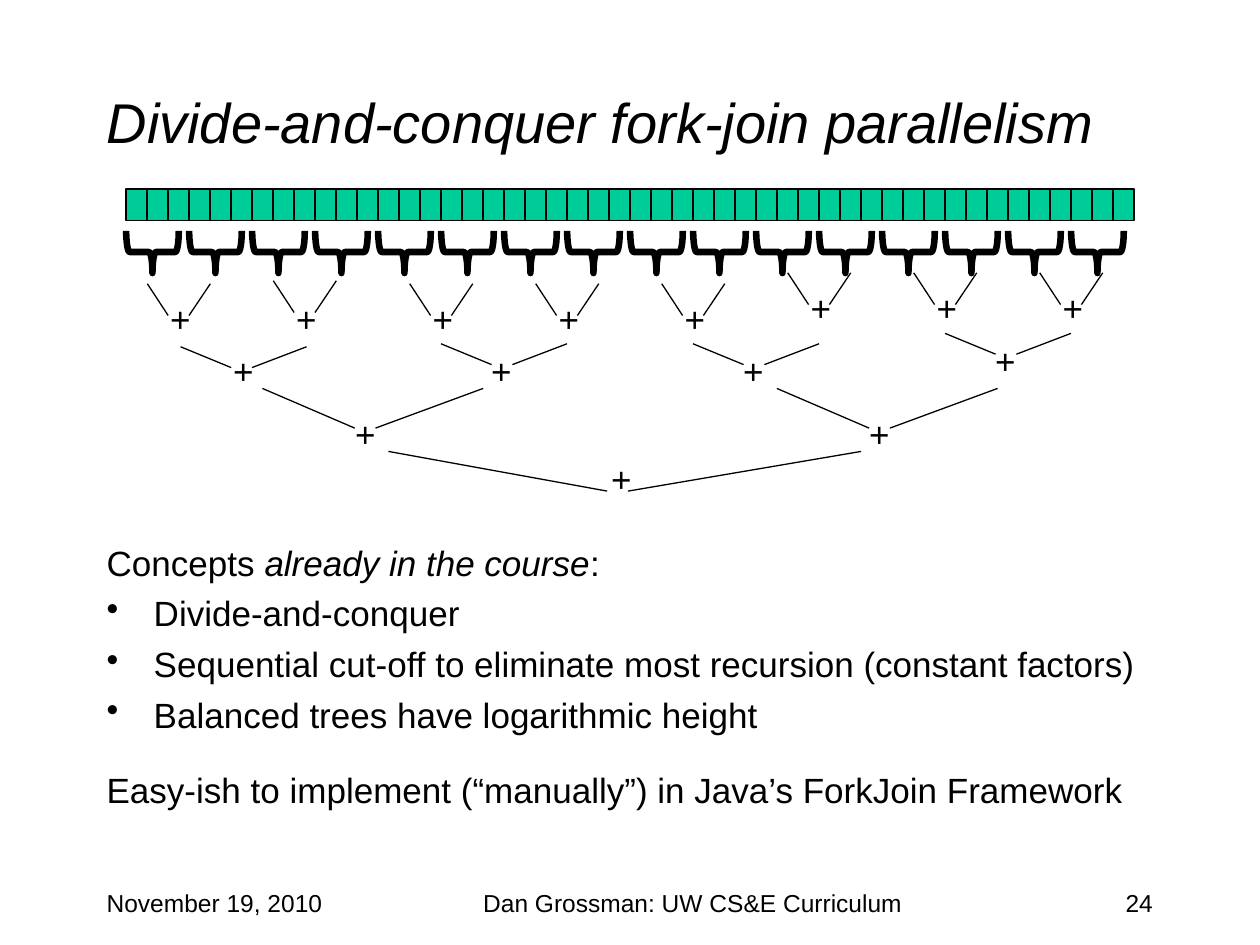
from lxml.etree import SubElement
from pptx import Presentation
from pptx.dml.color import RGBColor
from pptx.enum.shapes import MSO_CONNECTOR, MSO_SHAPE
from pptx.enum.text import MSO_ANCHOR, PP_ALIGN
from pptx.oxml.ns import qn
from pptx.util import Cm, Pt

theme = {
    "font": "Arial",
    "ink": RGBColor(0x00, 0x00, 0x00),
    "cell": RGBColor(0x00, 0xCC, 0x99),
    "title": Pt(32),
    "body": Pt(20),
    "foot": Pt(14),
    "thin": Pt(0.75),
    "thick": Pt(3.75),
}

deck = Presentation()
deck.slide_width, deck.slide_height = Cm(25.4), Cm(19.05)
slide = deck.slides.add_slide(deck.slide_layouts[6])
shapes = slide.shapes


def write(x, y, w, h, text, size, align=PP_ALIGN.LEFT):
    box = shapes.add_textbox(Cm(x), Cm(y), Cm(w), Cm(h))
    frame = box.text_frame
    frame.word_wrap = True
    frame.text = text
    for para in frame.paragraphs:
        para.alignment = align
        para.font.name = theme["font"]
        para.font.size = theme[size]
        para.font.color.rgb = theme["ink"]
    return frame


def draw(x1, y1, x2, y2):
    line = shapes.add_connector(MSO_CONNECTOR.STRAIGHT, Cm(x1), Cm(y1), Cm(x2), Cm(y2))
    line.line.color.rgb = theme["ink"]
    line.line.width = theme["thin"]
    SubElement(line._element.spPr, qn("a:effectLst"))


title = write(1.9, 0.85, 21.59, 3.18, "Divide-and-conquer fork-join parallelism", "title")
title.vertical_anchor = MSO_ANCHOR.MIDDLE
title.paragraphs[0].font.italic = True

write(1.9, 17.78, 5.29, 1.27, "November 19, 2010", "foot")
write(18.2, 17.78, 5.29, 1.27, "24", "foot", PP_ALIGN.RIGHT)
write(8.04, 17.78, 11.85, 1.27, "Dan Grossman: UW CS&E Curriculum", "foot", PP_ALIGN.CENTER)

cells = 48
width = 20.32 / cells
for i in range(cells):
    cell = shapes.add_shape(
        MSO_SHAPE.RECTANGLE, Cm(2.54 + i * width), Cm(3.81), Cm(width), Cm(0.64)
    )
    cell.shadow.inherit = False
    cell.fill.solid()
    cell.fill.fore_color.rgb = theme["cell"]
    cell.line.color.rgb = theme["ink"]
    cell.line.width = theme["thin"]

for i in range(cells // 3):
    brace = shapes.add_shape(
        MSO_SHAPE.LEFT_BRACE, Cm(2.65 + i * 1.27), Cm(4.55), Cm(0.85), Cm(1.06)
    )
    brace.rotation = 270
    brace.shadow.inherit = False
    brace.fill.background()
    brace.line.color.rgb = theme["ink"]
    brace.line.width = theme["thick"]

gap = 0.42
levels = [
    (1.27, 0.42, 0.64, [
        (3.18, 5.87, 2.97, 5.72), (5.72, 5.87, 5.51, 5.66),
        (8.47, 5.87, 8.26, 5.72), (11.01, 5.87, 10.8, 5.72),
        (13.55, 5.87, 13.34, 5.72), (16.09, 5.66, 15.88, 5.5),
        (18.63, 5.66, 18.42, 5.5), (21.17, 5.66, 20.96, 5.5),
    ]),
    (2.54, 1.02, 0.42, [
        (4.45, 6.93, 3.64, 6.99), (9.65, 6.93, 8.89, 6.93),
        (14.73, 6.93, 13.97, 6.93), (19.81, 6.72, 19.05, 6.72),
    ]),
    (4.45, 1.86, 0.8, [(6.91, 8.2, 5.29, 7.83), (17.27, 8.2, 15.66, 7.83)]),
    (9.53, 4.41, 0.8, [(12.07, 9.09, 7.83, 9.1)]),
]
for span, reach, drop, nodes in levels:
    for x, y, left, top in nodes:
        foot = left + reach
        draw(left, top, foot, top + drop)
        draw(left + span, top, foot + gap, top + drop)
        write(x, y, 0.92, 1.11, "+", "body").word_wrap = False

points = [
    "Concepts already in the course:",
    "Divide-and-conquer",
    "Sequential cut-off to eliminate most recursion (constant factors)",
    "Balanced trees have logarithmic height",
    "Easy-ish to implement (“manually”) in Java’s ForkJoin Framework",
]
body = write(1.9, 10.16, 21.59, 7.2, "\n".join(points), "body")
body.margin_top = Cm(0.75)
head, *items, last = body.paragraphs
head.text = "Concepts "
for text, slant in (("already in the course", True), (":", False)):
    run = head.add_run()
    run.text = text
    run.font.italic = slant
for item in items:
    item.space_before = Pt(5)
    props = item._p.get_or_add_pPr()
    props.set("marL", str(Cm(0.95)))
    props.set("indent", str(-Cm(0.95)))
    bullet = props.makeelement(qn("a:buChar"), {"char": "•"})
    props.insert_element_before(bullet, "a:tabLst", "a:defRPr", "a:extLst")
last.space_before = Pt(18.7)

for shape in shapes:
    if shape.has_text_frame:
        for para in shape.text_frame.paragraphs:
            for run in para.runs:
                run.font.name = para.font.name
                run.font.size = para.font.size
                run.font.color.rgb = theme["ink"]
                if para.font.italic:
                    run.font.italic = True

deck.save("out.pptx")
